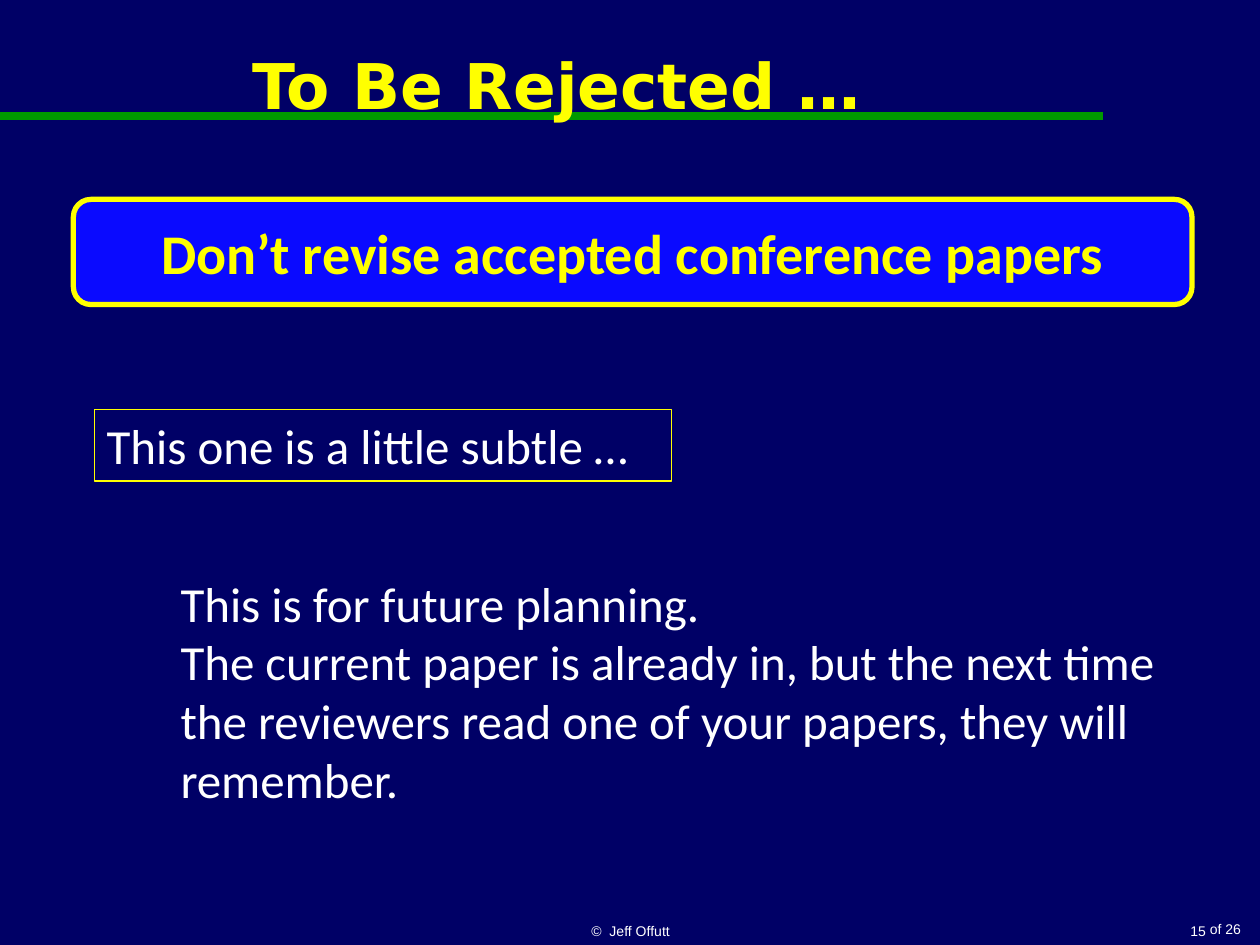
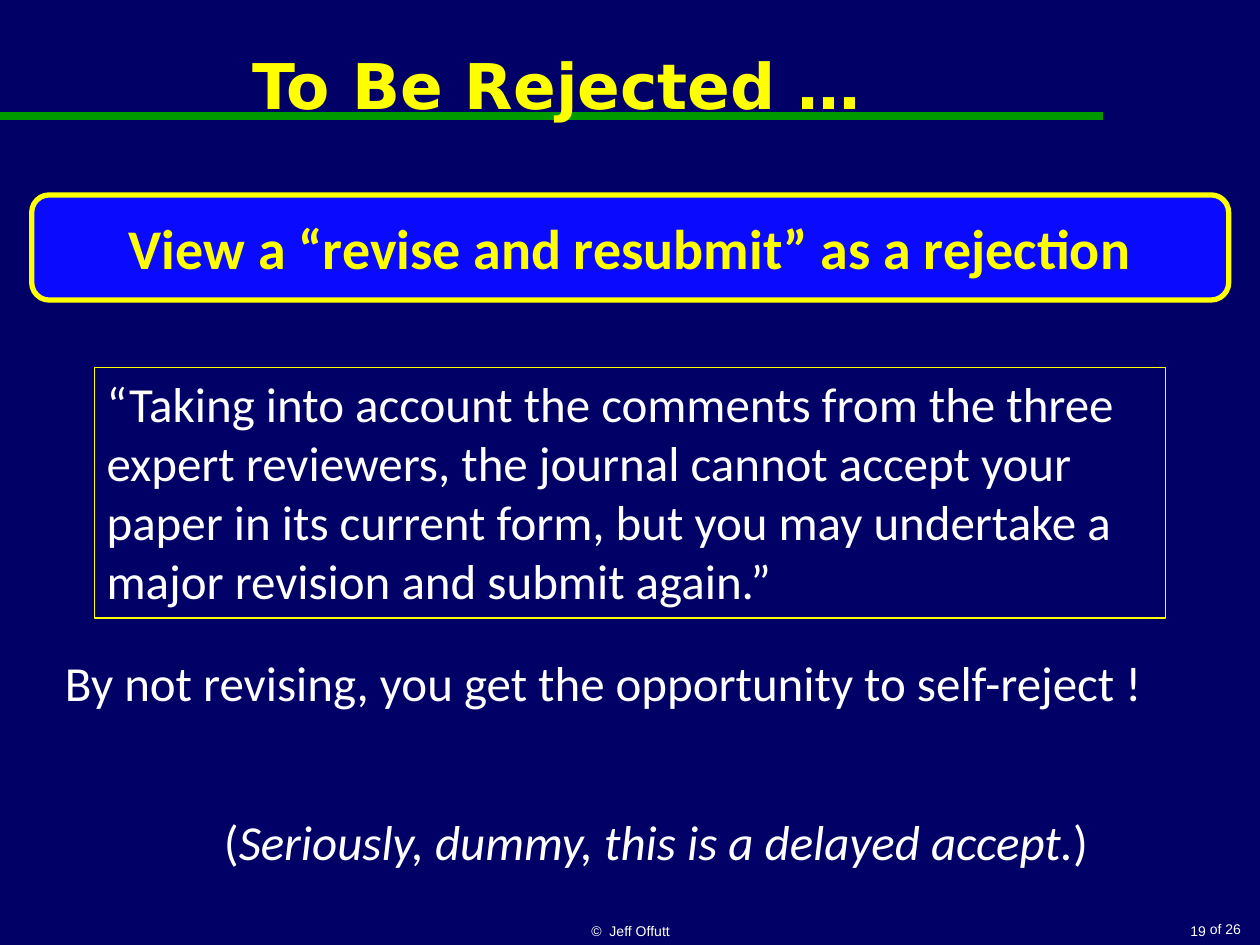
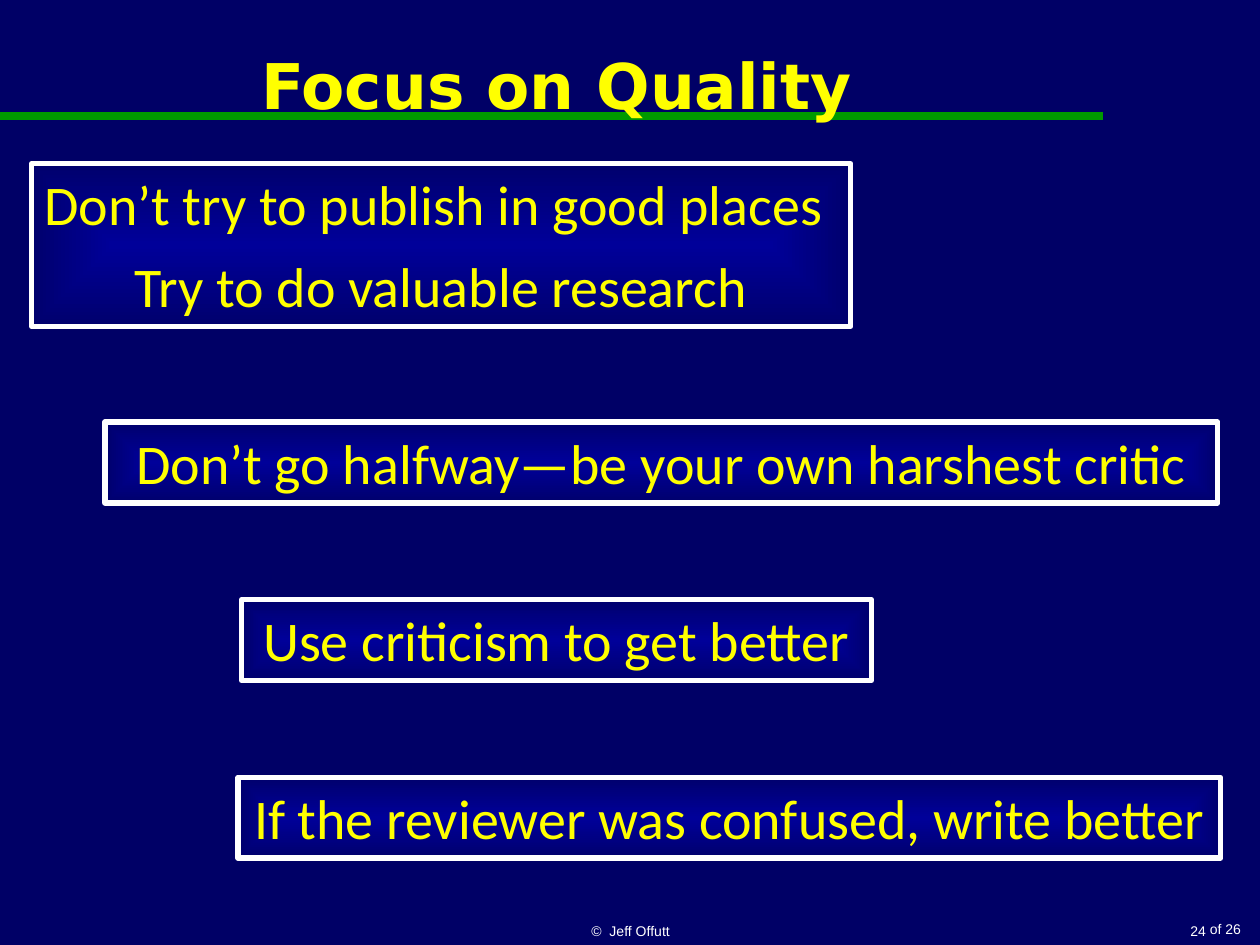
from lxml import etree
from pptx import Presentation
from pptx import util as u
from pptx.dml.color import RGBColor
from pptx.enum import shapes, text
from pptx.oxml.ns import qn

NAVY = RGBColor(0x00, 0x00, 0x66)
GREEN = RGBColor(0x00, 0x99, 0x00)
YELLOW = RGBColor(0xFF, 0xFF, 0x00)
WHITE = RGBColor(0xFF, 0xFF, 0xFF)
BLUE = RGBColor(0x0A, 0x0A, 0xFF)
GLOW = RGBColor(0x00, 0x00, 0x99)
GLOW_EDGE = RGBColor(0x00, 0x00, 0x6D)

LEFT, CENTER, RIGHT = text.PP_ALIGN.LEFT, text.PP_ALIGN.CENTER, text.PP_ALIGN.RIGHT
TOP, MIDDLE, BOTTOM = text.MSO_ANCHOR.TOP, text.MSO_ANCHOR.MIDDLE, text.MSO_ANCHOR.BOTTOM
RECTANGLE = shapes.MSO_SHAPE.RECTANGLE
ROUNDED = shapes.MSO_SHAPE.ROUNDED_RECTANGLE

FONTS = {
    "title": {"name": "DejaVu Sans", "size": u.Pt(36), "bold": True, "color": YELLOW},
    "footer": {"name": "Arial", "size": u.Pt(8), "color": WHITE},
    "banner": {"name": "Calibri", "size": u.Pt(32), "bold": True, "color": YELLOW},
    "body": {"name": "Calibri", "size": u.Pt(28), "color": WHITE},
    "aside": {"name": "Calibri", "size": u.Pt(28), "italic": True, "color": WHITE},
    "advice": {"name": "Calibri", "size": u.Pt(32), "color": YELLOW},
}
FRAMES = {
    "banner": (ROUNDED, [BLUE], YELLOW, 3),
    "quote": (RECTANGLE, [], YELLOW, 0.75),
    "advice": (RECTANGLE, [GLOW, GLOW_EDGE], WHITE, 3),
}

ADVICE_TOP, ADVICE_STEP, ADVICE_HEIGHT = 8.51, 3.58, 1.63
ADVICE = [
    (2.12, 22.43, "Don’t go halfway—be your own harshest critic"),
    (4.87, 12.7, "Use criticism to get better"),
    (4.8, 19.81, "If the reviewer was confused, write better"),
]

SLIDES = [
    ("To Be Rejected …", "15", [
        ("banner", (1.48, 4.02, 22.55, 2.12),
         [(CENTER, [("Don’t revise accepted conference papers", "banner")])]),
        ("quote", (1.9, 8.25, 11.64, 1.45),
         [(LEFT, [("This one is a little subtle …", "body")])]),
        (None, (3.39, 11.43, 20.32, 5.05), [
            (LEFT, [("This is for future planning.", "body")]),
            (LEFT, [("The current paper is already in, but the next time the reviewers "
                     "read one of your papers, they will remember.", "body")]),
        ]),
    ]),
    ("To Be Rejected …", "19", [
        ("banner", (0.64, 3.93, 24.13, 2.12),
         [(CENTER, [("View a “revise and resubmit” as a rejection", "banner")])]),
        ("quote", (1.9, 7.41, 21.59, 5.05),
         [(LEFT, [("“Taking into account the comments from the three expert reviewers, "
                   "the journal cannot accept your paper in its current form, but you may "
                   "undertake a major revision and submit again.”", "body")])]),
        (None, (1.06, 13.03, 22.86, 1.45),
         [(LEFT, [("By not revising, you get the opportunity to self-reject !", "body")])]),
        (None, (3.6, 16.23, 19.25, 1.45),
         [(CENTER, [("(", "body"),
                    ("Seriously, dummy, this is a delayed accept.", "aside"),
                    (")", "body")])]),
    ]),
    ("Focus on Quality", "24", [
        ("advice", (0.64, 3.3, 16.51, 3.28), [
            (LEFT, [("Don’t try to publish in good places", "advice")]),
            (CENTER, [("Try to do valuable research", "advice")]),
        ]),
    ] + [
        ("advice", (left, ADVICE_TOP + row * ADVICE_STEP, width, ADVICE_HEIGHT),
         [(CENTER, [(words, "advice")])])
        for row, (left, width, words) in enumerate(ADVICE)
    ]),
]


def write(box, paragraphs, anchor=TOP, wrap=True, gap=0):
    frame = box.text_frame
    frame.word_wrap = wrap
    frame.vertical_anchor = anchor
    for number, (alignment, spans) in enumerate(paragraphs):
        para = frame.add_paragraph() if number else frame.paragraphs[0]
        para.alignment = alignment
        if number and gap:
            para.space_before = u.Pt(gap)
        for words, style in spans:
            span = para.add_run()
            span.text = words
            for name, value in FONTS[style].items():
                if name == "color":
                    span.font.color.rgb = value
                else:
                    setattr(span.font, name, value)


def fill_shape(box, colours):
    if not colours:
        box.fill.background()
    elif len(colours) == 1:
        box.fill.solid()
        box.fill.fore_color.rgb = colours[0]
    else:
        box.fill.gradient()
        for stop, colour in zip(box.fill.gradient_stops, colours):
            stop.color.rgb = colour
        gradient = box.element.spPr.find(qn("a:gradFill"))
        gradient.remove(gradient.find(qn("a:lin")))
        outward = etree.SubElement(gradient, qn("a:path"), {"path": "shape"})
        etree.SubElement(outward, qn("a:fillToRect"), dict.fromkeys("ltrb", "50000"))


def add_box(page, kind, place, paragraphs):
    place = [u.Cm(length) for length in place]
    if kind is None:
        write(page.shapes.add_textbox(*place), paragraphs)
        return
    outline, colours, edge, weight = FRAMES[kind]
    box = page.shapes.add_shape(outline, *place)
    box.shadow.inherit = False
    fill_shape(box, colours)
    box.line.color.rgb = edge
    box.line.width = u.Pt(weight)
    write(box, paragraphs, MIDDLE if kind == "banner" else TOP, gap=8)


def add_furniture(page, title, number):
    rule = page.shapes.add_connector(
        shapes.MSO_CONNECTOR.STRAIGHT, 0, u.Cm(2.33), u.Cm(22.23), u.Cm(2.33))
    rule.line.color.rgb = GREEN
    rule.line.width = u.Pt(4.5)
    etree.SubElement(rule.element.spPr, qn("a:effectLst"))
    for words, style, alignment, anchor, wrap, place in [
        ("of 26", "footer", RIGHT, TOP, False, (24.13, 18.44, 1.14, 0.61)),
        (title, "title", CENTER, MIDDLE, True, (0.21, 0, 22.02, 3.39)),
        ("©  Jeff Offutt", "footer", CENTER, BOTTOM, True, (8.69, 18.21, 8.05, 0.85)),
        (number, "footer", RIGHT, BOTTOM, True, (20.11, 18.21, 4.45, 0.85)),
    ]:
        box = page.shapes.add_textbox(*[u.Cm(length) for length in place])
        write(box, [(alignment, [(words, style)])], anchor, wrap)


def main():
    deck = Presentation()
    deck.slide_width, deck.slide_height = u.Cm(25.4), u.Cm(19.05)
    background = deck.slide_master.background.fill
    background.solid()
    background.fore_color.rgb = NAVY
    for title, number, boxes in SLIDES:
        page = deck.slides.add_slide(deck.slide_layouts[6])
        add_furniture(page, title, number)
        for kind, place, paragraphs in boxes:
            add_box(page, kind, place, paragraphs)
    deck.save("out.pptx")


if __name__ == "__main__":
    main()
